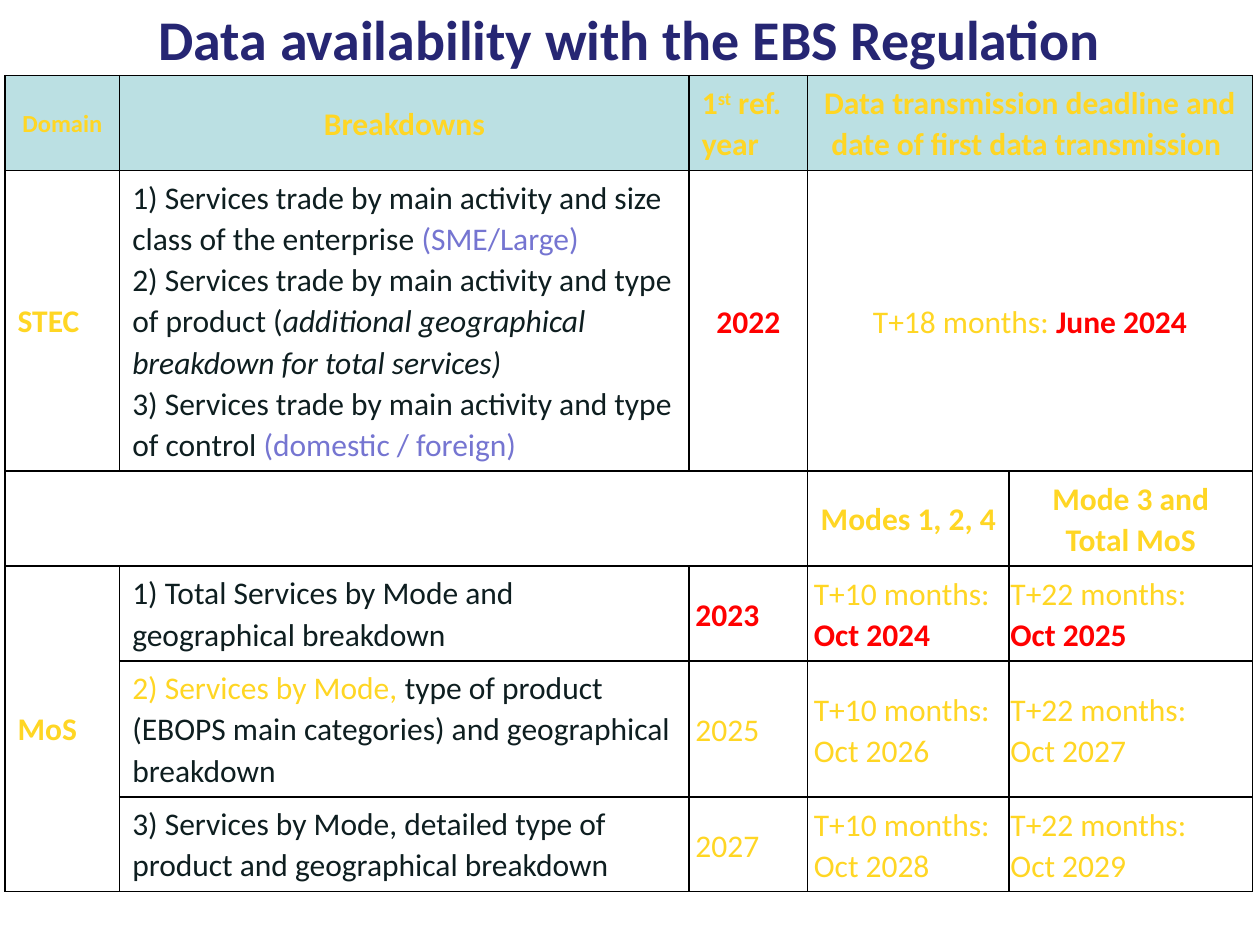
from lxml.etree import SubElement
from pptx import Presentation
from pptx.dml.color import RGBColor
from pptx.enum.text import MSO_ANCHOR, PP_ALIGN
from pptx.oxml.ns import qn
from pptx.util import Inches, Pt

COLORS = {
    "navy": "262673", "gold": "FFD624", "red": "FF0000", "dark": "0E1E20",
    "violet": "7575D1", "header": "BBE0E3", "border": "000000",
}
FONT = "Calibri"
COLUMN_WIDTHS = [0.91, 4.52, 0.94, 1.6, 1.93]
ROW_HEIGHTS = [0.73, 2.32, 0.73, 0.73, 1.05, 0.73]
# Cell margins: left, top, right, bottom
ROOMY = (0.1, 0.05, 0.1, 0.05)
TIGHT = (0.05, 0.01, 0.05, 0)
FLUSH = (0.01, 0.01, 0.01, 0)
# First and last cell of each merged area
MERGES = [((0, 3), (0, 4)), ((1, 3), (1, 4)), ((2, 0), (2, 2)), ((3, 0), (5, 0))]


def color(name):
    return RGBColor.from_string(COLORS[name])


def format_run(run, style, size):
    """Style is a color name followed by any of bold, italic, super."""
    tone, *traits = style.split()
    run.font.name = FONT
    run.font.size = Pt(size)
    run.font.color.rgb = color(tone)
    run.font.bold = "bold" in traits
    run.font.italic = "italic" in traits
    if "super" in traits:
        run._r.get_or_add_rPr().set("baseline", "30000")


def fill_cell(cell, paragraphs, centered=False, margins=ROOMY, size=18):
    """Each paragraph is a list of (text, style) pairs."""
    (cell.margin_left, cell.margin_top,
     cell.margin_right, cell.margin_bottom) = map(Inches, margins)
    frame = cell.text_frame
    for index, pieces in enumerate(paragraphs):
        paragraph = frame.add_paragraph() if index else frame.paragraphs[0]
        paragraph.alignment = PP_ALIGN.CENTER if centered else PP_ALIGN.LEFT
        paragraph.line_spacing = 1.07
        for text, style in pieces:
            run = paragraph.add_run()
            run.text = text
            format_run(run, style, size)


def add_borders(cell):
    properties = cell._tc.get_or_add_tcPr()
    for position, side in enumerate(("lnL", "lnR", "lnT", "lnB")):
        line = properties.makeelement(qn(f"a:{side}"), {"w": str(Pt(1))})
        fill = SubElement(line, qn("a:solidFill"))
        SubElement(fill, qn("a:srgbClr"), val=COLORS["border"])
        properties.insert(position, line)


def add_title(slide, left, top, width, height):
    title = slide.shapes.title
    title.left, title.top, title.width, title.height = map(
        Inches, (left, top, width, height))
    frame = title.text_frame
    frame.text = "Data availability with the EBS Regulation"
    frame.vertical_anchor = MSO_ANCHOR.MIDDLE
    heading = frame.paragraphs[0]
    heading.alignment = PP_ALIGN.CENTER
    indents = heading._p.get_or_add_pPr()
    indents.set("marL", str(Inches(0.39)))
    indents.set("indent", str(Inches(-0.39)))
    format_run(heading.runs[0], "navy bold", 32)


def fill_header(table):
    fill_cell(table.cell(0, 0), [[("Domain", "gold bold")]], True, size=14)
    fill_cell(table.cell(0, 1), [[("Breakdowns", "gold bold")]], True)
    fill_cell(table.cell(0, 2), [[("1", "gold bold"), ("st", "gold bold super"),
                                  (" ref. year", "gold bold")]])
    fill_cell(table.cell(0, 3), [[(
        "Data transmission deadline and date of first data transmission ",
        "gold bold")]], True)


def fill_stec(table):
    fill_cell(table.cell(1, 0), [[("STEC", "gold bold")]])
    fill_cell(table.cell(1, 1), [
        [("1) Services trade by main activity and size class of the enterprise ", "dark"),
         ("(SME/Large)", "violet")],
        [("2) Services trade by main activity and type of product (", "dark"),
         ("additional geographical breakdown for total services)", "dark italic")],
        [("3) Services trade by main activity and type of control ", "dark"),
         ("(domestic / foreign)", "violet")],
    ])
    fill_cell(table.cell(1, 2), [[("2022", "red bold")]], True, TIGHT)
    fill_cell(table.cell(1, 3), [[("T+18 months: ", "gold"),
                                  ("June 2024", "red bold")]], True, TIGHT)


def fill_mos(table):
    fill_cell(table.cell(2, 3), [[("Modes 1, 2, 4", "gold bold")]], True)
    fill_cell(table.cell(2, 4), [[("Mode 3 and Total MoS", "gold bold")]], True)
    fill_cell(table.cell(3, 0), [[("MoS", "gold bold")]])
    # Breakdown, first reference year, style of the dates
    breakdowns = [
        ([("1) Total Services by Mode and geographical breakdown", "dark")],
         2023, "red bold"),
        ([("2) Services by Mode, ", "gold"),
          ("type of product (EBOPS main categories) and geographical breakdown", "dark")],
         2025, "gold"),
        ([("3) Services by Mode, detailed type of product and geographical breakdown",
           "dark")], 2027, "gold"),
    ]
    for row, (breakdown, year, style) in enumerate(breakdowns, start=3):
        fill_cell(table.cell(row, 1), [breakdown])
        fill_cell(table.cell(row, 2), [[(str(year), style)]], margins=TIGHT)
        fill_cell(table.cell(row, 3), [[("T+10 months: ", "gold"),
                                        (f"Oct {year + 1}", style)]], margins=TIGHT)
        fill_cell(table.cell(row, 4), [[("T+22 months:", "gold")],
                                       [(f"Oct {year + 2}", style)]], margins=FLUSH)


def add_availability_table(slide, left, top, width, height):
    table = slide.shapes.add_table(
        len(ROW_HEIGHTS), len(COLUMN_WIDTHS),
        *map(Inches, (left, top, width, height))).table
    table.first_row = table.horz_banding = False
    for column, column_width in zip(table.columns, COLUMN_WIDTHS):
        column.width = Inches(column_width)
    for row, row_height in zip(table.rows, ROW_HEIGHTS):
        row.height = Inches(row_height)

    # Plain grid with a tinted header row
    for row_index, row in enumerate(table.rows):
        for cell in row.cells:
            cell.vertical_anchor = MSO_ANCHOR.MIDDLE
            if row_index == 0:
                cell.fill.solid()
                cell.fill.fore_color.rgb = color("header")
            else:
                cell.fill.background()
            add_borders(cell)
    for first, last in MERGES:
        table.cell(*first).merge(table.cell(*last))

    fill_header(table)
    fill_stec(table)
    fill_mos(table)


def main():
    presentation = Presentation()
    presentation.slide_width = Inches(10)
    presentation.slide_height = Inches(7.5)
    slide = presentation.slides.add_slide(presentation.slide_layouts[5])
    add_title(slide, 0.5, -0.21, 9, 1.02)
    add_availability_table(slide, 0.04, 0.6, sum(COLUMN_WIDTHS), sum(ROW_HEIGHTS))
    presentation.save("out.pptx")


if __name__ == "__main__":
    main()
